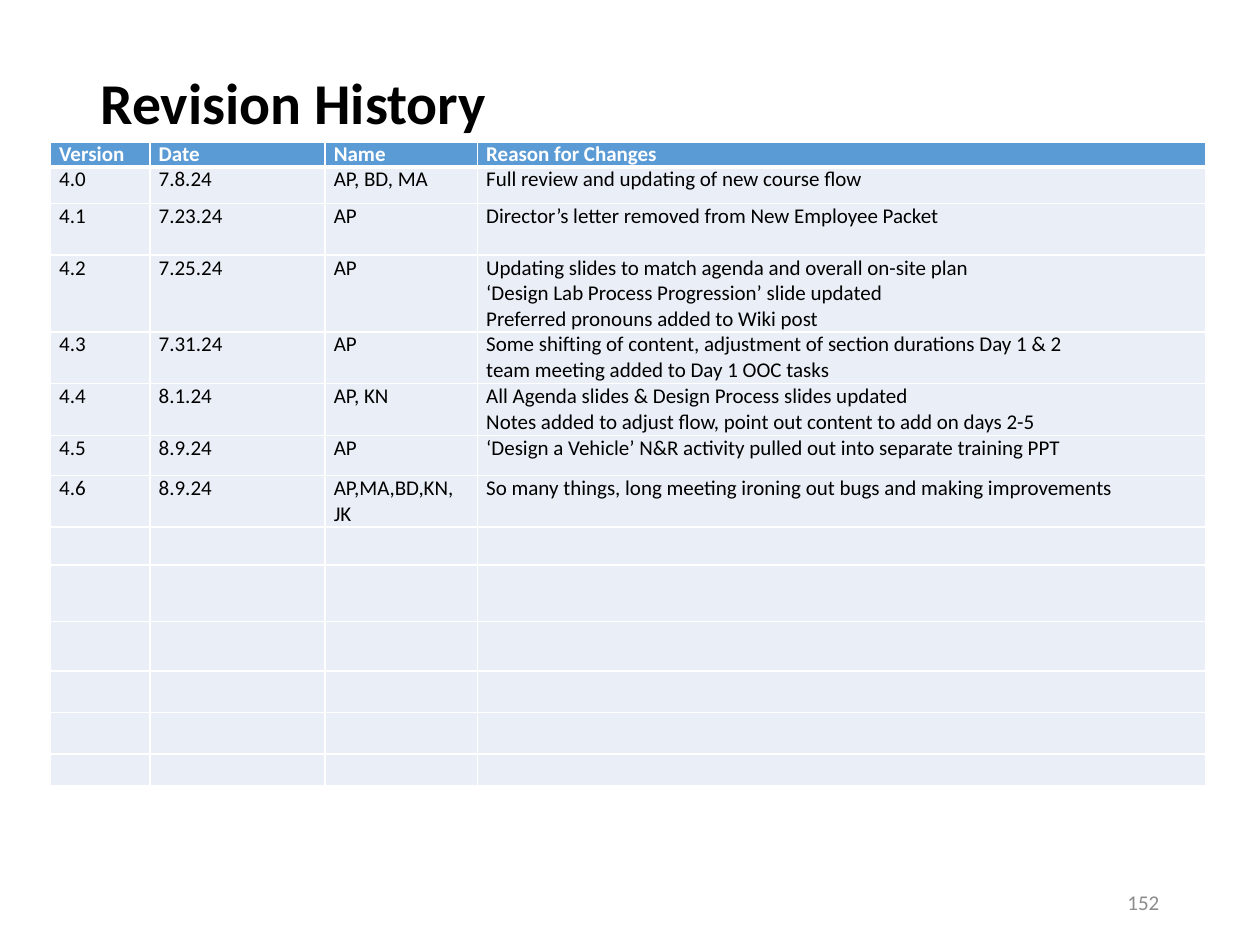
from dataclasses import dataclass
from lxml.etree import SubElement
from pptx import Presentation
from pptx.dml.color import RGBColor as Color
from pptx.enum.text import MSO_ANCHOR as Anchor, PP_ALIGN as Align
from pptx.oxml.ns import qn
from pptx.util import Inches, Pt


@dataclass(frozen=True)
class Theme:
    font: str = "Calibri"
    ink: str = "000000"
    paper: str = "FFFFFF"
    muted: str = "8C8C8C"
    header: str = "5B9BD5"
    body: str = "EAEFF7"
    title_size: int = 33
    text_size: int = 12
    rule: int = 1
    header_rule: int = 3


THEME = Theme()
WIDTH, HEIGHT = 10, 7.5
COLUMNS = (0.79, 1.39, 1.21, 5.78)
ROWS = (0.2, 0.29, 0.41, 0.61, 0.41, 0.41, 0.32,
        0.41, 0.3, 0.45, 0.39, 0.33, 0.33, 0.25)
REVISIONS = (
    ("Version", "Date", "Name", "Reason for Changes"),
    ("4.0", "7.8.24", "AP, BD, MA", "Full review and updating of new course flow"),
    ("4.1", "7.23.24", "AP", "Director’s letter removed from New Employee Packet"),
    ("4.2", "7.25.24", "AP",
     "Updating slides to match agenda and overall on-site plan\n"
     "‘Design Lab Process Progression’ slide updated\n"
     "Preferred pronouns added to Wiki post"),
    ("4.3", "7.31.24", "AP",
     "Some shifting of content, adjustment of section durations Day 1 & 2\n"
     "team meeting added to Day 1 OOC tasks"),
    ("4.4", "8.1.24", "AP, KN",
     "All Agenda slides & Design Process slides updated\n"
     "Notes added to adjust flow, point out content to add on days 2-5"),
    ("4.5", "8.9.24", "AP",
     "‘Design a Vehicle’ N&R activity pulled out into separate training PPT"),
    ("4.6", "8.9.24", "AP,MA,BD,KN, JK",
     "So many things, long meeting ironing out bugs and making improvements"),
)


def apply(target, values):
    for name, value in values.items():
        setattr(target, name, value)


def across(share):
    return Inches(WIDTH * share)


def down(share):
    return Inches(HEIGHT * share)


def write(frame, text, color, size=THEME.text_size, bold=False, **layout):
    for index, line in enumerate(text.split("\n")):
        para = frame.add_paragraph() if index else frame.paragraphs[0]
        apply(para, layout)
        if not line:
            para._p.get_or_add_endParaRPr().set("sz", str(size * 100))
            continue
        span = para.add_run()
        span.text = line
        apply(span.font, {"name": THEME.font, "size": Pt(size), "bold": bold})
        span.font.color.rgb = Color.from_string(color)


def add_text(page, place, text, color, size, bottom=0.05, bold=False, **layout):
    left, top, width, height = place
    box = page.shapes.add_textbox(across(left), down(top), across(width), down(height))
    apply(box.text_frame, {"word_wrap": True, "vertical_anchor": Anchor.MIDDLE,
                           "margin_bottom": Inches(bottom)})
    write(box.text_frame, text, color, size, bold, **layout)


def add_borders(cell, bottom):
    properties = cell._tc.get_or_add_tcPr()
    for side, width in zip("LRTB", (THEME.rule,) * 3 + (bottom,)):
        line = SubElement(properties, qn(f"a:ln{side}"), w=str(Pt(width)))
        fill = SubElement(line, qn("a:solidFill"))
        SubElement(fill, qn("a:srgbClr"), val=THEME.paper)


def format_cell(cell, text, is_header):
    apply(cell, {"margin_left": Inches(0.07), "margin_right": Inches(0.07),
                 "margin_top": 0, "margin_bottom": 0})
    add_borders(cell, THEME.header_rule if is_header else THEME.rule)
    cell.fill.solid()
    cell.fill.fore_color.rgb = Color.from_string(THEME.header if is_header else THEME.body)
    write(cell.text_frame, text, THEME.paper if is_header else THEME.ink, bold=is_header)


def add_revision_table(page, left, top):
    frame = page.shapes.add_table(len(ROWS), len(COLUMNS), across(left), down(top),
                                  Inches(sum(COLUMNS)), Inches(sum(ROWS)))
    table = frame.table
    apply(table, {"first_row": True, "horz_banding": False})
    for column, width in zip(table.columns, COLUMNS):
        column.width = Inches(width)
    for number, (row, height) in enumerate(zip(table.rows, ROWS)):
        row.height = Inches(height)
        texts = REVISIONS[number] if number < len(REVISIONS) else ("",) * len(COLUMNS)
        for cell, text in zip(row.cells, texts):
            format_cell(cell, text, number == 0)


def main():
    deck = Presentation()
    apply(deck, {"slide_width": Inches(WIDTH), "slide_height": Inches(HEIGHT)})
    page = deck.slides.add_slide(deck.slide_layouts[6])
    add_text(page, (0.07, 0.05, 0.86, 0.19), "Revision History", THEME.ink,
             THEME.title_size, bottom=0.55, bold=True, line_spacing=0.9)
    add_revision_table(page, 0.04, 0.15)
    add_text(page, (0.71, 0.93, 0.22, 0.05), "152", THEME.muted,
             THEME.text_size, alignment=Align.RIGHT)
    deck.save("out.pptx")


if __name__ == "__main__":
    main()
